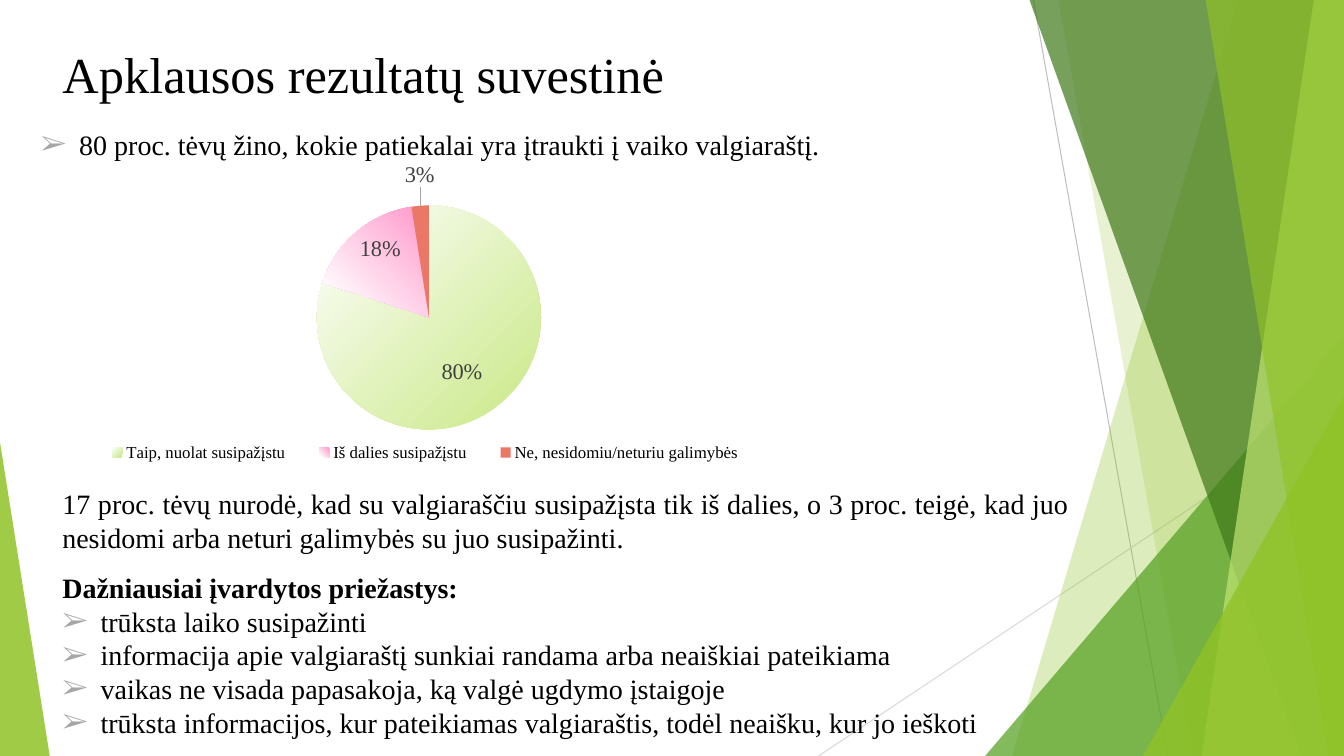
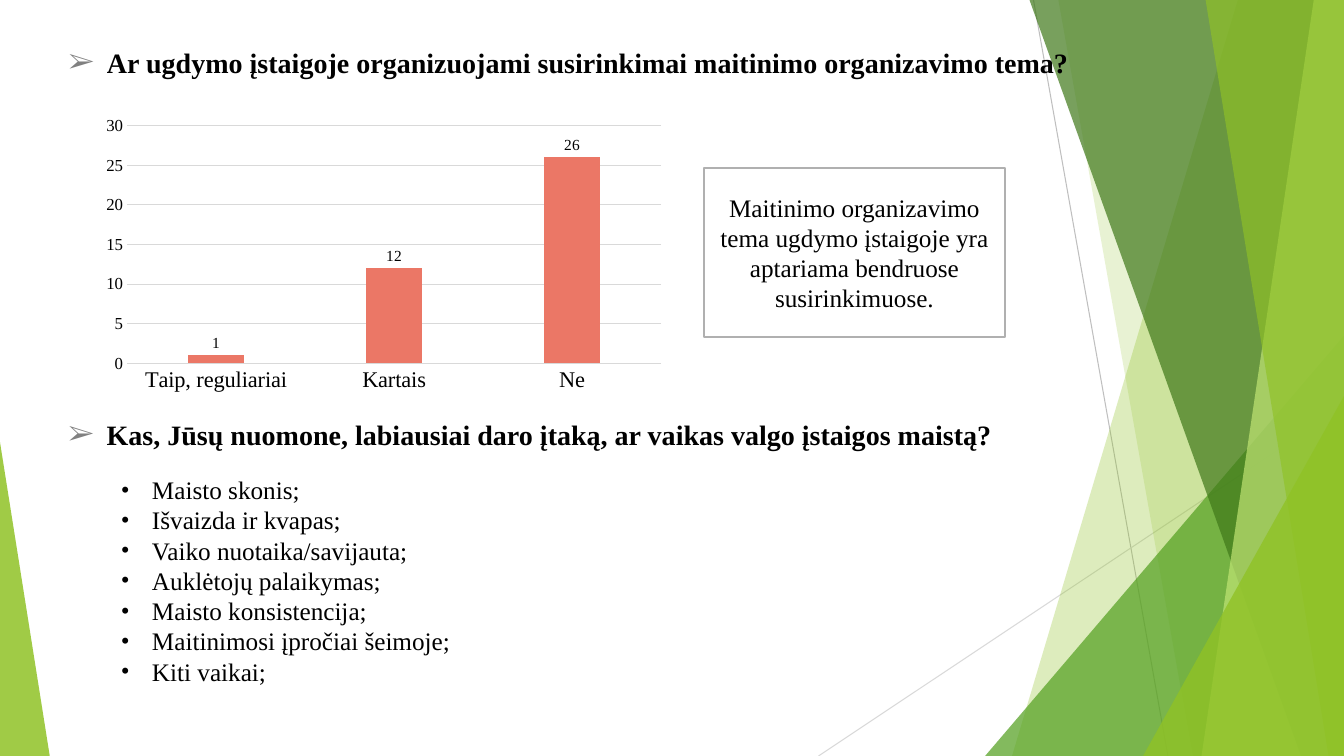
from lxml.etree import SubElement
from pptx import Presentation
from pptx.chart.data import CategoryChartData
from pptx.dml.color import RGBColor
from pptx.enum.chart import XL_CHART_TYPE as ChartType
from pptx.enum.chart import XL_LABEL_POSITION as LabelPos
from pptx.enum.chart import XL_LEGEND_POSITION as LegendPos
from pptx.enum.chart import XL_TICK_MARK as Tick
from pptx.enum.shapes import MSO_CONNECTOR as Connector
from pptx.enum.shapes import MSO_SHAPE as Preset
from pptx.enum.text import MSO_ANCHOR as Anchor
from pptx.enum.text import MSO_AUTO_SIZE as AutoSize
from pptx.enum.text import PP_ALIGN as Align
from pptx.oxml import parse_xml
from pptx.oxml.ns import nsdecls, qn
from pptx.util import Inches, Pt

BLACK = RGBColor(0x00, 0x00, 0x00)
WHITE = RGBColor(0xFF, 0xFF, 0xFF)
DARK_GREY = RGBColor(0x40, 0x40, 0x40)
MID_GREY = RGBColor(0x80, 0x80, 0x80)
SOFT_GREY = RGBColor(0xA6, 0xA6, 0xA6)
BORDER_GREY = RGBColor(0xB0, 0xB0, 0xB0)
LINE_GREY = RGBColor(0xBF, 0xBF, 0xBF)
PALE_GREY = RGBColor(0xD9, 0xD9, 0xD9)
LIME = RGBColor(0x90, 0xC2, 0x26)
LIGHT_LIME = RGBColor(0xC0, 0xE4, 0x74)
GREEN = RGBColor(0x54, 0xA0, 0x21)
DARK_GREEN = RGBColor(0x3F, 0x78, 0x19)
PALE_GREEN = RGBColor(0xD0, 0xEB, 0x96)
PINK = RGBColor(0xFF, 0x99, 0xCC)
CORAL = RGBColor(0xEB, 0x77, 0x66)

FONT, CHART_FONT = "Times New Roman", "Karla"
ARROW, DOT = "➢", "•"


def style_font(font, size, color=BLACK, bold=False, name=FONT):
    font.name, font.size, font.bold = name, Pt(size), bold
    font.color.rgb = color


def write(frame, text, size=20, bold=False, align=Align.LEFT, spacing=None,
          bullet=None, bullet_color=BLACK, indent=0.38):
    """Append one paragraph, filling the first one while the frame is empty."""
    paragraph = frame.paragraphs[0] if not frame.text else frame.add_paragraph()
    if bullet:
        props = paragraph._p.get_or_add_pPr()
        props.set("marL", str(Inches(indent)))
        props.set("indent", str(-Inches(indent)))
        tint = SubElement(props, qn("a:buClr"))
        SubElement(tint, qn("a:srgbClr")).set("val", str(bullet_color))
        SubElement(props, qn("a:buFont")).set("typeface", FONT)
        SubElement(props, qn("a:buChar")).set("char", bullet)
    paragraph.alignment = align
    if spacing:
        paragraph.line_spacing = spacing
    run = paragraph.add_run()
    run.text = text
    style_font(run.font, size, bold=bold)


def manual_layout(**values):
    fields = "".join(f'<c:{key} val="{value}"/>' for key, value in values.items())
    return parse_xml(f"<c:layout {nsdecls('c')}><c:manualLayout>{fields}"
                     "</c:manualLayout></c:layout>")


def leader_lines(color):
    return parse_xml(
        f"<c:leaderLines {nsdecls('c', 'a')}><c:spPr><a:ln w=\"9525\"><a:solidFill>"
        f'<a:srgbClr val="{color}"/></a:solidFill></a:ln></c:spPr></c:leaderLines>')


class Deck:
    """Holds the style and the current slide; lengths are percent of its size."""

    def __init__(self):
        self.deck = Presentation()
        self.deck.slide_width, self.deck.slide_height = Inches(13.33), Inches(7.5)
        self.layout = self.deck.slide_layouts.get_by_name("Title Only")
        self.slide = None

    def x(self, share):
        return int(self.deck.slide_width * share / 100)

    def y(self, share):
        return int(self.deck.slide_height * share / 100)

    def box(self, left, top, width, height):
        return self.x(left), self.y(top), self.x(width), self.y(height)

    def new_slide(self):
        self.slide = self.deck.slides.add_slide(self.layout)

    def title(self, area, text, **style):
        title = self.slide.shapes.title
        title.left, title.top, title.width, title.height = self.box(*area)
        frame = title.text_frame
        frame.vertical_anchor, frame.auto_size = Anchor.TOP, AutoSize.NONE
        write(frame, text, **style)

    def text(self, area):
        frame = self.slide.shapes.add_textbox(*self.box(*area)).text_frame
        frame.word_wrap = True
        return frame

    def callout(self, area, text, **style):
        callout = self.slide.shapes.add_shape(Preset.RECTANGLE, *self.box(*area))
        callout.shadow.inherit = False
        callout.fill.solid()
        callout.fill.fore_color.rgb = WHITE
        callout.line.color.rgb, callout.line.width = BORDER_GREY, Pt(1.5)
        callout.text_frame.word_wrap = True
        callout.text_frame.vertical_anchor = Anchor.MIDDLE
        write(callout.text_frame, text, align=Align.CENTER, **style)

    def tint(self, shape, color, opacity):
        shape.shadow.inherit = False
        shape.line.fill.background()
        shape.fill.solid()
        shape.fill.fore_color.rgb = color
        for rgb in shape.element.spPr.iter(qn("a:srgbClr")):
            SubElement(rgb, qn("a:alpha")).set("val", str(opacity * 1000))

    def band(self, top_x, bottom_x, color, opacity):
        """Full-height area from a slanted left edge to the right slide edge."""
        builder = self.slide.shapes.build_freeform(self.x(top_x), 0)
        corners = [(100, 0), (100, 100), (bottom_x, 100)]
        builder.add_line_segments([(self.x(h), self.y(v)) for h, v in corners])
        self.tint(builder.convert_to_shape(), color, opacity)

    def wedge(self, left, top, width, apex, color, opacity):
        """Triangle standing on the bottom edge, apex from 0 (left) to 1 (right)."""
        wedge = self.slide.shapes.add_shape(
            Preset.ISOSCELES_TRIANGLE, *self.box(left, top, width, 100 - top))
        wedge.adjustments[0] = apex
        self.tint(wedge, color, opacity)

    def line(self, start, end, color):
        line = self.slide.shapes.add_connector(
            Connector.STRAIGHT, self.x(start[0]), self.y(start[1]),
            self.x(end[0]), self.y(end[1]))
        line.line.color.rgb, line.line.width = color, Pt(0.75)
        SubElement(line.element.spPr, qn("a:effectLst"))

    def decorate_layout(self):
        """Draw the green facets on the current slide and hand them to the layout."""
        for placeholder in list(self.layout.placeholders):
            if placeholder.placeholder_format.idx:
                placeholder.element.getparent().remove(placeholder.element)
        self.line((76.9, 0), (86.9, 100), LINE_GREY)
        self.line((100, 53.7), (60.9, 100), PALE_GREY)
        self.band(92.1, 75.3, LIME, 30)
        self.band(78.75, 88.75, LIME, 20)
        self.wedge(73.3, 44.4, 26.7, 1, GREEN, 72)
        self.band(76.6, 96.8, DARK_GREEN, 70)
        self.band(97.75, 89.4, LIGHT_LIME, 70)
        self.band(89.7, 98.85, LIME, 65)
        self.wedge(85.05, 52.4, 14.95, 1, LIME, 80)
        self.wedge(0, 58.5, 3.7, 0, LIME, 85)
        for shape in list(self.slide.shapes):
            if not shape.is_placeholder:
                self.layout.shapes.element.append(shape.element)

    def chart(self, kind, area, answers, label_size, label_color=BLACK):
        data = CategoryChartData()
        data.categories = list(answers)
        data.add_series("Series 1", list(answers.values()))
        chart = self.slide.shapes.add_chart(kind, *self.box(*area), data).chart
        chart.has_title = chart.has_legend = False
        style_font(chart.font, 10, name=CHART_FONT)
        labels = chart.plots[0].series[0].data_labels
        labels.show_value, labels.position = True, LabelPos.OUTSIDE_END
        style_font(labels.font, label_size, label_color)
        return chart

    def pie(self, area, answers, slices):
        """Each slice: colour, gradient angle and stops, label position and shift."""
        chart = self.chart(ChartType.PIE, area, answers, 16, DARK_GREY)
        chart.has_legend = True
        chart.legend.position = LegendPos.BOTTOM
        chart.legend.include_in_layout = False
        style_font(chart.legend.font, 12)
        chart.element.xpath(".//c:legendPos")[0].addnext(manual_layout(
            xMode="edge", yMode="edge", x=0.03, y=0.83, w=0.94, h=0.1))
        points = chart.plots[0].series[0].points
        for index, (color, angle, stops, position, shift) in enumerate(slices):
            fill = points[index].format.fill
            if angle is None:
                fill.solid()
                fill.fore_color.rgb = color
            else:
                fill.gradient()
                fill.gradient_angle = angle
                for stop, shade, place in zip(fill.gradient_stops, (color, WHITE), stops):
                    stop.color.rgb, stop.position = shade, place
            label = points[index].data_label
            style_font(label.font, 16, DARK_GREY)
            label.position = position
            if shift:
                label_index = chart.element.xpath(".//c:dLbl/c:idx")[index]
                label_index.addnext(manual_layout(x=0, y=shift))
        for tag, shown in (("showVal", "0"), ("showPercent", "1")):
            for flag in chart.element.xpath(f".//c:dLbl/c:{tag}"):
                flag.set("val", shown)
        for flag in chart.element.xpath(".//c:ser/c:dLbls/c:showLeaderLines"):
            flag.addnext(leader_lines(SOFT_GREY))
        plot_area = chart.element.xpath(".//c:plotArea")[0]
        for layout in plot_area.findall(qn("c:layout")):
            plot_area.remove(layout)
        plot_area.insert(0, manual_layout(
            layoutTarget="inner", xMode="edge", yMode="edge",
            x=0.35, y=0.13, w=0.31, h=0.68))

    def columns(self, area, answers, color):
        chart = self.chart(ChartType.COLUMN_CLUSTERED, area, answers, 11)
        plot = chart.plots[0]
        plot.vary_by_categories = False
        plot.gap_width, plot.overlap = 219, -27
        fill = plot.series[0].format.fill
        fill.solid()
        fill.fore_color.rgb = color
        names, scale = chart.category_axis, chart.value_axis
        for axis, size in ((names, 16), (scale, 12)):
            axis.major_tick_mark = axis.minor_tick_mark = Tick.NONE
            style_font(axis.tick_labels.font, size)
        scale.format.line.fill.background()
        for line in (names.format.line, scale.major_gridlines.format.line):
            line.color.rgb, line.width = PALE_GREY, Pt(0.75)


def survey_summary(deck):
    deck.title((3.9, 5, 58.9, 9.5), "Apklausos rezultatų suvestinė", size=36)
    arrow = dict(bullet=ARROW, bullet_color=SOFT_GREY)
    write(deck.text((2.3, 16.2, 62, 10.8)),
          "80 proc. tėvų žino, kokie patiekalai yra įtraukti į vaiko valgiaraštį.",
          **arrow)
    deck.pie((4.65, 21.5, 54, 43.6),
             {"Taip, nuolat susipažįstu": 32,
              "Iš dalies susipažįstu": 7,
              "Ne, nesidomiu/neturiu galimybės": 1},
             [(PALE_GREEN, 135, (0.14, 1), LabelPos.CENTER, 0.03),
              (PINK, 225, (0.02, 0.9), LabelPos.INSIDE_END, None),
              (CORAL, None, None, LabelPos.OUTSIDE_END, -0.04)])
    findings = deck.text((3.9, 63.7, 76.4, 35.1))
    write(findings, "17 proc. tėvų nurodė, kad su valgiaraščiu susipažįsta tik iš "
          "dalies, o 3 proc. teigė, kad juo nesidomi arba neturi galimybės su juo "
          "susipažinti.", align=Align.JUSTIFY)
    write(findings, "Dažniausiai įvardytos priežastys:", bold=True, spacing=1.5,
          align=Align.JUSTIFY)
    for reason in (
            "trūksta laiko susipažinti",
            "informacija apie valgiaraštį sunkiai randama arba neaiškiai pateikiama",
            "vaikas ne visada papasakoja, ką valgė ugdymo įstaigoje",
            "trūksta informacijos, kur pateikiamas valgiaraštis, todėl neaišku, "
            "kur jo ieškoti"):
        write(findings, reason, align=Align.JUSTIFY, **arrow)


def meetings_and_influences(deck):
    question = dict(bold=True, bullet=ARROW, bullet_color=MID_GREY)
    deck.title((4.35, 5.3, 77.9, 12.9), "Ar ugdymo įstaigoje organizuojami "
               "susirinkimai maitinimo organizavimo tema?", **question)
    deck.columns((7.05, 14.7, 43, 38),
                 {"Taip, reguliariai": 1, "Kartais": 12, "Ne": 26}, CORAL)
    deck.callout((52.4, 22.2, 22.35, 22.4), "Maitinimo organizavimo tema ugdymo "
                 "įstaigoje yra aptariama bendruose susirinkimuose.", size=18)
    write(deck.text((4.35, 54.6, 71.6, 5.9)), "Kas, Jūsų nuomone, labiausiai daro "
          "įtaką, ar vaikas valgo įstaigos maistą?", **question)
    influences = deck.text((8.25, 62.1, 66.5, 29.6))
    for influence in ("Maisto skonis;", "Išvaizda ir kvapas;",
                      "Vaiko nuotaika/savijauta;", "Auklėtojų palaikymas;",
                      "Maisto konsistencija;", "Maitinimosi įpročiai šeimoje;",
                      "Kiti vaikai;"):
        write(influences, influence, size=18, bullet=DOT, indent=0.31)


def main():
    deck = Deck()
    deck.new_slide()
    deck.decorate_layout()
    survey_summary(deck)
    deck.new_slide()
    meetings_and_influences(deck)
    deck.deck.save("out.pptx")


if __name__ == "__main__":
    main()
